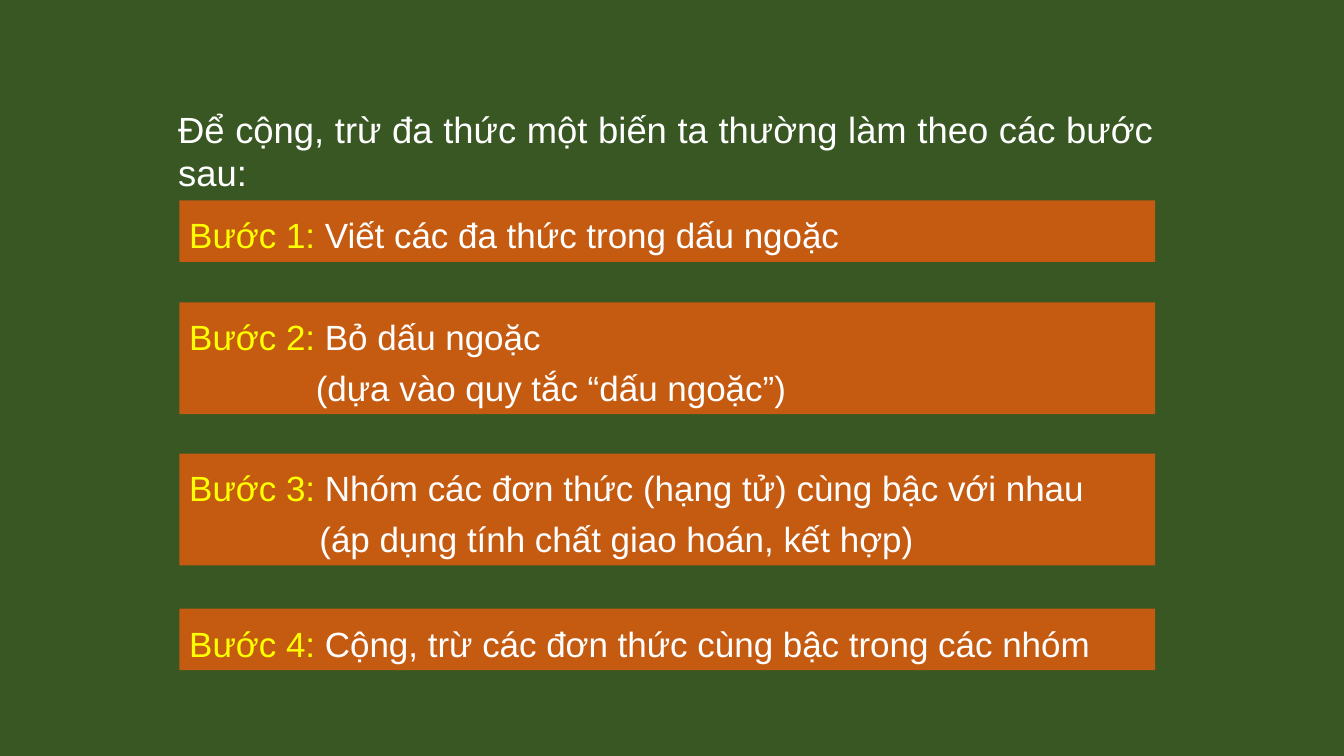
from pptx import Presentation
from pptx.dml.color import RGBColor
from pptx.enum.shapes import MSO_SHAPE as Shape
from pptx.enum.text import MSO_ANCHOR as Anchor, MSO_AUTO_SIZE as AutoSize, PP_ALIGN as Align
from pptx.util import Cm, Pt

GREEN = RGBColor(0x38, 0x57, 0x23)
ORANGE = RGBColor(0xC5, 0x5A, 0x11)
YELLOW = RGBColor(0xFF, 0xFF, 0x00)
WHITE = RGBColor(0xFF, 0xFF, 0xFF)


class StepsPage:
    """Style and current slide, with one method per kind of element."""

    font_name = "Arial"
    frame_format = {"word_wrap": True, "auto_size": AutoSize.SHAPE_TO_FIT_TEXT,
                    "vertical_anchor": Anchor.TOP}

    def __init__(self, deck):
        self.page = deck.slides.add_slide(deck.slide_layouts[6])
        fill = self.page.background.fill
        fill.solid()
        fill.fore_color.rgb = GREEN

    def fill_para(self, para, spans, size, spacing=1.0, indent=0):
        para.alignment = Align.JUSTIFY
        para.line_spacing = spacing
        if indent:
            para._p.get_or_add_pPr().set("marL", str(Cm(indent)))
        for text, color in spans:
            span = para.add_run()
            span.text = text
            for name, value in {"name": self.font_name, "size": Pt(size)}.items():
                setattr(span.font, name, value)
            span.font.color.rgb = color

    def format_frame(self, box):
        for name, value in self.frame_format.items():
            setattr(box.text_frame, name, value)
        return box.text_frame

    def intro(self, left, top, width, height, text):
        box = self.page.shapes.add_textbox(Cm(left), Cm(top), Cm(width), Cm(height))
        self.fill_para(self.format_frame(box).paragraphs[0], [(text, WHITE)], size=26)

    def step(self, top, height, label, text, note=None, indent=0):
        box = self.page.shapes.add_shape(
            Shape.RECTANGLE, Cm(4.52), Cm(top), Cm(24.59), Cm(height))
        box.shadow.inherit = False
        box.fill.solid()
        box.fill.fore_color.rgb = ORANGE
        box.line.fill.background()
        frame = self.format_frame(box)
        self.fill_para(frame.paragraphs[0], [(label + " ", YELLOW), (text, WHITE)],
                       size=25, spacing=1.2)
        if note:
            self.fill_para(frame.add_paragraph(), [(note, WHITE)],
                           size=25, spacing=1.2, indent=indent)


def main():
    deck = Presentation()
    deck.slide_width, deck.slide_height = Cm(33.87), Cm(19.05)
    steps_page = StepsPage(deck)

    # Introduction
    steps_page.intro(4.24, 2.57, 25.12, 2.49,
                     "Để cộng, trừ đa thức một biến ta thường làm theo các bước sau:")

    # Steps: top, height, text, then an optional note and its indent
    steps = [
        (5.05, 1.55, "Viết các đa thức trong dấu ngoặc"),
        (7.62, 2.82, "Bỏ dấu ngoặc", "(dựa vào quy tắc “dấu ngoặc”)", 3.19),
        (11.43, 2.82, "Nhóm các đơn thức (hạng tử) cùng bậc với nhau",
         "(áp dụng tính chất giao hoán, kết hợp)", 3.28),
        (15.34, 1.55, "Cộng, trừ các đơn thức cùng bậc trong các nhóm"),
    ]
    for number, (top, height, *texts) in enumerate(steps, start=1):
        steps_page.step(top, height, f"Bước {number}:", *texts)

    deck.save("out.pptx")


if __name__ == "__main__":
    main()
